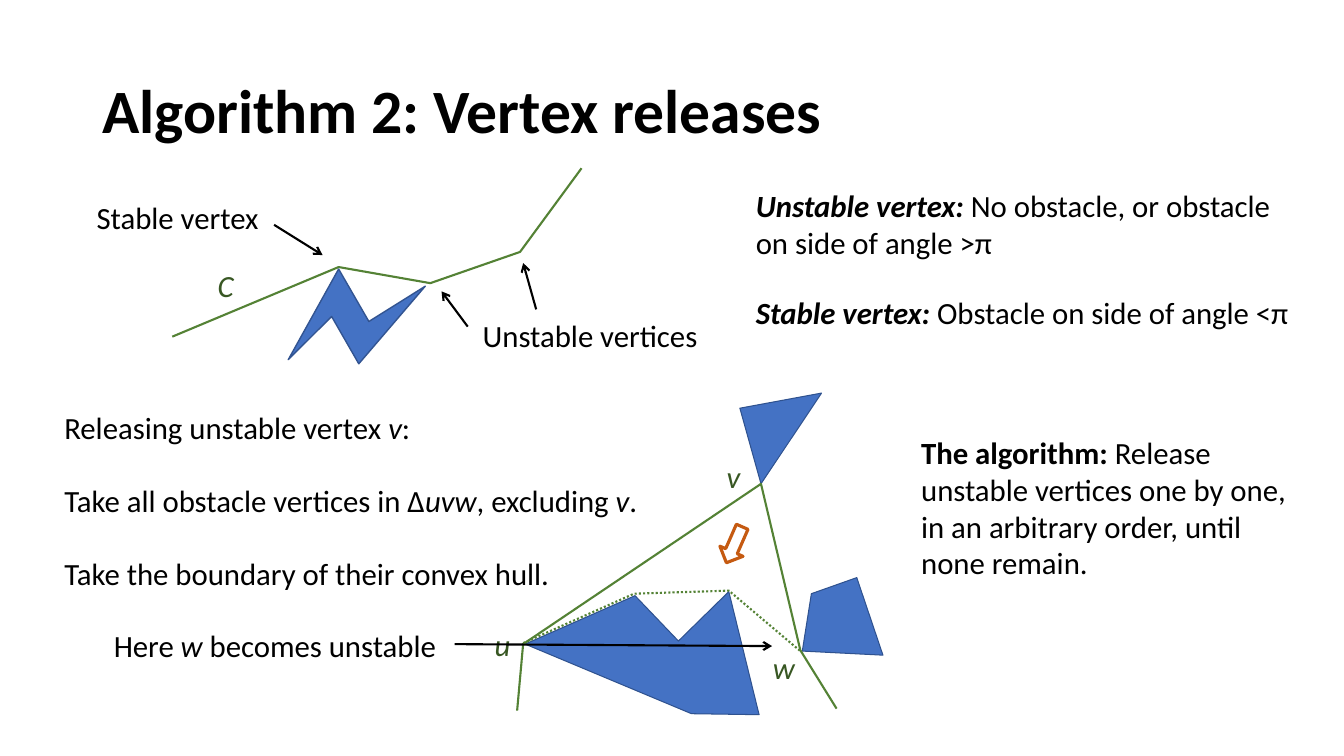
from lxml import etree
from pptx import Presentation
from pptx.dml.color import RGBColor
from pptx.enum.dml import MSO_LINE
from pptx.enum.shapes import MSO_CONNECTOR, MSO_SHAPE
from pptx.enum.text import MSO_ANCHOR, MSO_AUTO_SIZE
from pptx.oxml.ns import qn
from pptx.util import Pt

STRAIGHT = MSO_CONNECTOR.STRAIGHT
DOWN_ARROW = MSO_SHAPE.DOWN_ARROW
DOTTED = MSO_LINE.ROUND_DOT
MIDDLE = MSO_ANCHOR.MIDDLE
GROW = MSO_AUTO_SIZE.SHAPE_TO_FIT_TEXT
FIXED = MSO_AUTO_SIZE.NONE

FONT = "Calibri"
TEXT_SIZE = 22
LABEL_SIDE = 32.4
LINE_HEIGHT = 33.8
COLORS = {
    "black": "000000",
    "label": "385723",
    "curve": "548235",
    "obstacle": "4472C4",
    "obstacle edge": "2F528F",
    "spiky edge": "325491",
    "release": "C55A11",
}

CURVE = [(123.1, 240.5), (241.9, 190.8), (307.4, 202.3), (371.5, 180), (415.4, 120.2)]
SPIKY_OBSTACLE = [(263.5, 229.7), (303.8, 204.5), (256.3, 259.9),
                  (236.9, 226.1), (205.9, 257), (241.9, 192.2)]
OBSTACLES = [
    [(375.1, 460.1), (453.6, 425.5), (484.6, 457.9),
     (520.6, 422.6), (542.2, 510.5), (493.9, 509.8)],
    [(528.5, 291.6), (586.8, 280.8), (543.6, 345.6)],
    [(579.6, 424.1), (612, 412.6), (630.7, 468), (573.1, 465.1)],
]
PATH_UVW = [(369.4, 507.6), (373.7, 460.1), (543.6, 345.6), (571.7, 464.4), (597.6, 506.2)]
CONVEX_HULL = [(373.7, 459.4), (452.9, 424.1), (520.6, 421.9), (571.7, 465.1)]

# Each statement: left, top, width, height, runs of (text, style letters)
STATEMENTS = [
    (61.9, 138.2, 136.1, LINE_HEIGHT, [("Stable vertex", "")]),
    (337.7, 222.5, 195.1, LINE_HEIGHT, [("Unstable vertices", "")]),
    (532.8, 129.6, 391.7, 60.5,
     [("Unstable vertex: ", "bi"), ("No obstacle, or obstacle on side of angle >π", "")]),
    (532.8, 206.6, 410.4, LINE_HEIGHT,
     [("Stable vertex: ", "bi"), ("Obstacle on side of angle <π", "")]),
    (38.9, 288.7, 273.6, LINE_HEIGHT,
     [("Releasing unstable vertex ", ""), ("v", "i"), (":", "")]),
    (38.9, 340.6, 450.7, LINE_HEIGHT,
     [("Take all obstacle vertices in Δ", ""), ("uvw", "i"),
      (", excluding ", ""), ("v", "i"), (".", "")]),
    (38.9, 392.4, 411.8, LINE_HEIGHT, [("Take the boundary of their convex hull.", "")]),
    (74.2, 444.2, 273.6, LINE_HEIGHT,
     [("Here", ""), (" w", "i"), (" becomes unstable", "")]),
    (650.9, 306, 283.7, 113.8,
     [("The algorithm: ", "b"),
      ("Release unstable vertices one by one, in an arbitrary order, until none remain.", "")]),
]
LABELS = [("C", 148.3, 187.2), ("u", 346.3, 443.5), ("v", 511.9, 323.3), ("w", 545, 460.1)]
POINTERS = [
    ((195.8, 160.6), (230.4, 182.2)),
    ((334.1, 233.3), (315.4, 208.1)),
    ((383, 221), (373.7, 187.9)),
    ((324.7, 460.1), (551.5, 461.5)),
]


def rgb(name):
    return RGBColor.from_string(COLORS[name])


def set_line(line, color, width):
    line.color.rgb = rgb(color)
    line.width = Pt(width)


def add_text(slide, left, top, width, height, runs, color="black", size=TEXT_SIZE):
    """Add a one-paragraph text box; style letters are b (bold) and i (italic)."""
    box = slide.shapes.add_textbox(Pt(left), Pt(top), Pt(width), Pt(height))
    frame = box.text_frame
    frame.word_wrap = True
    frame.auto_size = GROW
    for text, style in runs:
        run = frame.paragraphs[0].add_run()
        run.text = text
        run.font.name = FONT
        run.font.size = Pt(size)
        run.font.bold = "b" in style
        run.font.italic = "i" in style
        run.font.color.rgb = rgb(color)
    return box


def add_title(slide, text):
    frame = add_text(slide, 66, 28.8, 828, 104.4, [(text, "b")], size=44).text_frame
    frame.auto_size = FIXED
    frame.vertical_anchor = MIDDLE
    frame.paragraphs[0].line_spacing = 0.9


def add_outline(slide, points, close):
    vertices = [(Pt(x), Pt(y)) for x, y in points]
    builder = slide.shapes.build_freeform(*vertices[0])
    builder.add_line_segments(vertices[1:], close=close)
    shape = builder.convert_to_shape()
    shape.shadow.inherit = False
    return shape


def add_polygon(slide, points, edge="obstacle edge", width=0.75):
    shape = add_outline(slide, points, True)
    shape.fill.solid()
    shape.fill.fore_color.rgb = rgb("obstacle")
    set_line(shape.line, edge, width)


def add_polyline(slide, points, dash=None):
    shape = add_outline(slide, points, False)
    shape.fill.background()
    set_line(shape.line, "curve", 1.5)
    if dash:
        shape.line.dash_style = dash


def add_release_arrow(slide):
    shape = slide.shapes.add_shape(DOWN_ARROW, Pt(515.5), Pt(375.1), Pt(18), Pt(28.1))
    shape.rotation = 23.7
    shape.shadow.inherit = False
    shape.fill.background()
    set_line(shape.line, "release", 2.25)


def add_pointer(slide, start, end):
    connector = slide.shapes.add_connector(
        STRAIGHT, *(Pt(value) for value in start + end))
    set_line(connector.line, "black", 1.5)
    etree.SubElement(connector.get_or_add_ln(), qn("a:tailEnd"), type="arrow")
    etree.SubElement(connector.element.spPr, qn("a:effectLst"))


def main():
    presentation = Presentation()
    presentation.slide_width = Pt(960)
    presentation.slide_height = Pt(540)
    slide = presentation.slides.add_slide(presentation.slide_layouts[6])

    add_title(slide, "Algorithm 2: Vertex releases")
    add_polyline(slide, CURVE)
    add_polygon(slide, SPIKY_OBSTACLE, "spiky edge", 1)
    for obstacle in OBSTACLES:
        add_polygon(slide, obstacle)
    add_polyline(slide, PATH_UVW)
    add_release_arrow(slide)
    add_polyline(slide, CONVEX_HULL, DOTTED)
    for statement in STATEMENTS:
        add_text(slide, *statement)
    for letter, left, top in LABELS:
        add_text(slide, left, top, LABEL_SIDE, LINE_HEIGHT, [(letter, "i")], "label")
    for start, end in POINTERS:
        add_pointer(slide, start, end)

    presentation.save("out.pptx")


if __name__ == "__main__":
    main()
